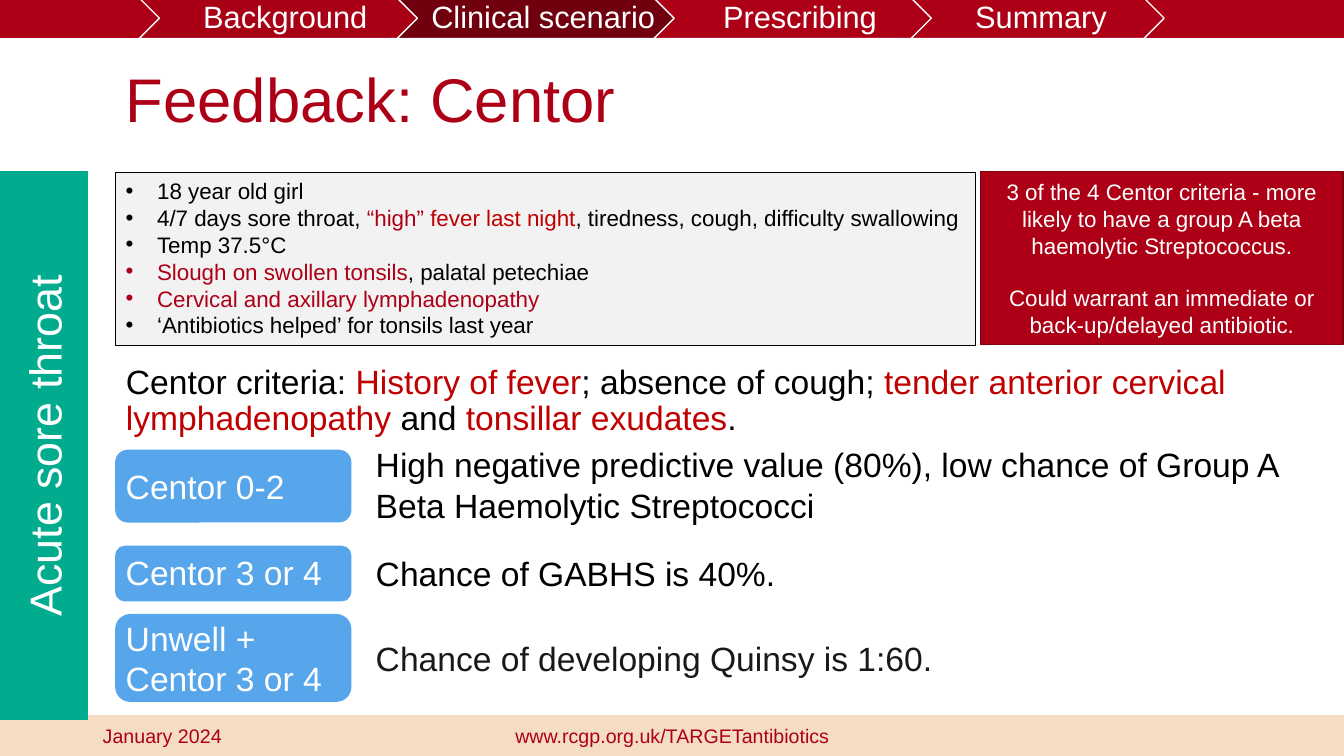
from pptx import Presentation
from pptx import util as u
from pptx.dml import color
from pptx.enum import shapes, text
from pptx.oxml import ns, xmlchemy

RED, ACCENT, WHITE, BLACK = "AD0016", "C00000", "FFFFFF", "000000"
BLUE, GREEN, SAND, GREY = "57A5EB", "00AB8E", "F4DDC4", "F2F2F2"
SHAPE = shapes.MSO_SHAPE
ALIGN = text.PP_ALIGN
MIDDLE, TOP = text.MSO_ANCHOR.MIDDLE, text.MSO_ANCHOR.TOP
CONTENT_LEFT = 2.92
ANSWER_LEFT = 9.22

CASE_NOTES = [
    [("18 year old girl", BLACK)],
    [("4/7 days sore throat, ", BLACK), ("“high” ", RED), ("fever last night", ACCENT),
     (", tiredness, cough, difficulty swallowing", BLACK)],
    [("Temp 37.5°C", BLACK)],
    [("Slough on swollen tonsils", RED), (", palatal petechiae", BLACK)],
    [("Cervical and axillary lymphadenopathy", RED)],
    [("‘Antibiotics helped’ for tonsils last year", BLACK)],
]
CRITERIA = [
    ("Centor criteria: ", BLACK), ("History of fever", ACCENT),
    ("; absence of cough; ", BLACK),
    ("tender anterior cervical lymphadenopathy ", ACCENT),
    ("and ", BLACK), ("tonsillar exudates", ACCENT), (".", BLACK),
]
VERDICT = [
    [("3 of the 4 Centor criteria - more likely to have a group A beta "
      "haemolytic Streptococcus.", WHITE)],
    [("Could warrant an immediate or back-up/delayed antibiotic.", WHITE)],
]
# left, width, label, fill
STEPS = [
    (3.51, 7.19, "Background", "A80014"),
    (10.01, 7.19, "Clinical scenario", "70000D"),
    (16.48, 7.19, "Prescribing", RED),
    (22.96, 6.38, "Summary", RED),
]
# box top and height, label top, label lines, answer top and width, answer, colour
SCORES = [
    (11.35, 1.8, 11.61, ["Centor 0-2"], 11.07, 24.41,
     "High negative predictive value (80%), low chance of Group A "
     "Beta Haemolytic Streptococci", BLACK),
    (13.77, 1.37, 13.79, ["Centor 3 or 4"], 13.82, 16.94,
     "Chance of GABHS is 40%.", BLACK),
    (15.49, 2.18, 15.44, ["Unwell +", "Centor 3 or 4"], 15.95, 16.94,
     "Chance of developing Quinsy is 1:60.", "191919"),
]


def rgb(value):
    return color.RGBColor.from_string(value)


def box(left, top, width, height):
    return [u.Cm(value) for value in (left, top, width, height)]


def set_bullet(paragraph, character=None, indent=0):
    """Give the paragraph a hanging bullet, or none at all."""
    properties = paragraph._p.get_or_add_pPr()
    properties.set("marL", str(u.Cm(indent)))
    properties.set("indent", str(-u.Cm(indent)))
    tag = "a:buChar" if character else "a:buNone"
    bullet = xmlchemy.OxmlElement(tag)
    if character:
        font = xmlchemy.OxmlElement("a:buFont")
        font.set("typeface", "Arial")
        properties.append(font)
        bullet.set("char", character)
    properties.append(bullet)


def write(shape, paragraphs, size, align=ALIGN.LEFT, anchor=TOP, spacing=1.0,
          gap=0, bullet=None):
    """Fill a shape with paragraphs, each a list of (wording, colour) runs."""
    frame = shape.text_frame
    frame.word_wrap = True
    frame.auto_size = text.MSO_AUTO_SIZE.NONE
    frame.vertical_anchor = anchor
    for index, runs in enumerate(paragraphs):
        paragraph = frame.add_paragraph() if index else frame.paragraphs[0]
        set_bullet(paragraph, bullet, 0.79 if bullet else 0)
        paragraph.alignment = align
        paragraph.line_spacing = spacing
        paragraph.space_before = u.Pt(gap if index else 0)
        for wording, colour in runs:
            run = paragraph.add_run()
            run.text = wording
            run.font.name = "Arial"
            run.font.size = u.Pt(size)
            run.font.color.rgb = rgb(colour)


def add_panel(slide, kind, place, fill, line=None, line_width=1):
    shape = slide.shapes.add_shape(kind, *box(*place))
    shape.shadow.inherit = False
    shape.fill.solid()
    shape.fill.fore_color.rgb = rgb(fill)
    shape.line.color.rgb = rgb(line or fill)
    shape.line.width = u.Pt(line_width)
    return shape


def add_text(slide, place, paragraphs, size, **options):
    shape = slide.shapes.add_textbox(*box(*place))
    write(shape, paragraphs, size, **options)
    return shape


def fill_placeholder(shape, place, paragraphs, size, anchor):
    shape.left, shape.top, shape.width, shape.height = box(*place)
    write(shape, paragraphs, size, anchor=anchor, spacing=0.9)


def add_navigation(slide):
    add_panel(slide, SHAPE.RECTANGLE, (0, -0.03, 33.87, 0.97), RED)
    for left, width, label, fill in STEPS:
        add_panel(slide, SHAPE.CHEVRON, (left, -0.05, width, 1.02), fill, WHITE)
        caption = add_text(slide, (left + 0.51, -0.05, width - 1.02, 1.02),
                           [[(label, WHITE)]], 22, align=ALIGN.CENTER,
                           anchor=MIDDLE, spacing=0.9)
        frame = caption.text_frame
        frame.margin_left = u.Cm(0.25)
        frame.margin_top = frame.margin_right = frame.margin_bottom = u.Cm(0.08)


def add_footer(slide):
    add_panel(slide, SHAPE.RECTANGLE, (0, 18.03, 33.87, 1.02), SAND)
    add_text(slide, (2.34, 18.11, 7.62, 1.02), [[("January 2024", RED)]], 14)
    add_text(slide, (11.23, 18.11, 11.43, 1.02),
             [[("www.rcgp.org.uk/TARGETantibiotics", RED)]], 14, align=ALIGN.CENTER)


def add_topic_bar(slide):
    bar = add_panel(slide, SHAPE.RECTANGLE, (0, 4.34, 2.21, 13.79), GREEN)
    write(bar, [[("Acute sore throat", WHITE)]], 32, align=ALIGN.CENTER, anchor=MIDDLE)
    bar._element.txBody.find(ns.qn("a:bodyPr")).set("vert", "vert270")


def add_case(slide):
    notes = add_panel(slide, SHAPE.RECTANGLE, (CONTENT_LEFT, 4.34, 21.67, 4.37),
                      GREY, BLACK, 0.75)
    write(notes, CASE_NOTES, 16, bullet="•")
    verdict = add_panel(slide, SHAPE.RECTANGLE, (24.71, 4.32, 9.14, 4.37), RED, "800010")
    write(verdict, VERDICT, 16, align=ALIGN.CENTER, anchor=MIDDLE, gap=18.4)


def add_scores(slide):
    for (top, height, label_top, lines, answer_top, answer_width,
         answer, colour) in SCORES:
        add_panel(slide, SHAPE.ROUNDED_RECTANGLE, (CONTENT_LEFT, top, 5.92, height), BLUE)
        line_height = 1.04
        add_text(slide, (CONTENT_LEFT, label_top, 6.65, 0.23 + line_height * len(lines)),
                 [[(line, WHITE)] for line in lines], 24)
        answer_height = 2.31 if answer_width > 20 else 1.27
        add_text(slide, (ANSWER_LEFT, answer_top, answer_width, answer_height),
                 [[(answer, colour)]], 24)


def main():
    presentation = Presentation()
    presentation.slide_width, presentation.slide_height = u.Cm(33.87), u.Cm(19.05)
    slide = presentation.slides.add_slide(presentation.slide_layouts[1])
    fill_placeholder(slide.shapes.title, (CONTENT_LEFT, 1.32, 24.41, 2.54),
                     [[("Feedback: Centor", RED)]], 44, MIDDLE)
    fill_placeholder(slide.placeholders[1], (CONTENT_LEFT, 9.07, 30.3, 1.8),
                     [CRITERIA], 24, TOP)
    add_footer(slide)
    add_topic_bar(slide)
    add_case(slide)
    add_scores(slide)
    add_navigation(slide)
    presentation.save("out.pptx")


if __name__ == "__main__":
    main()
